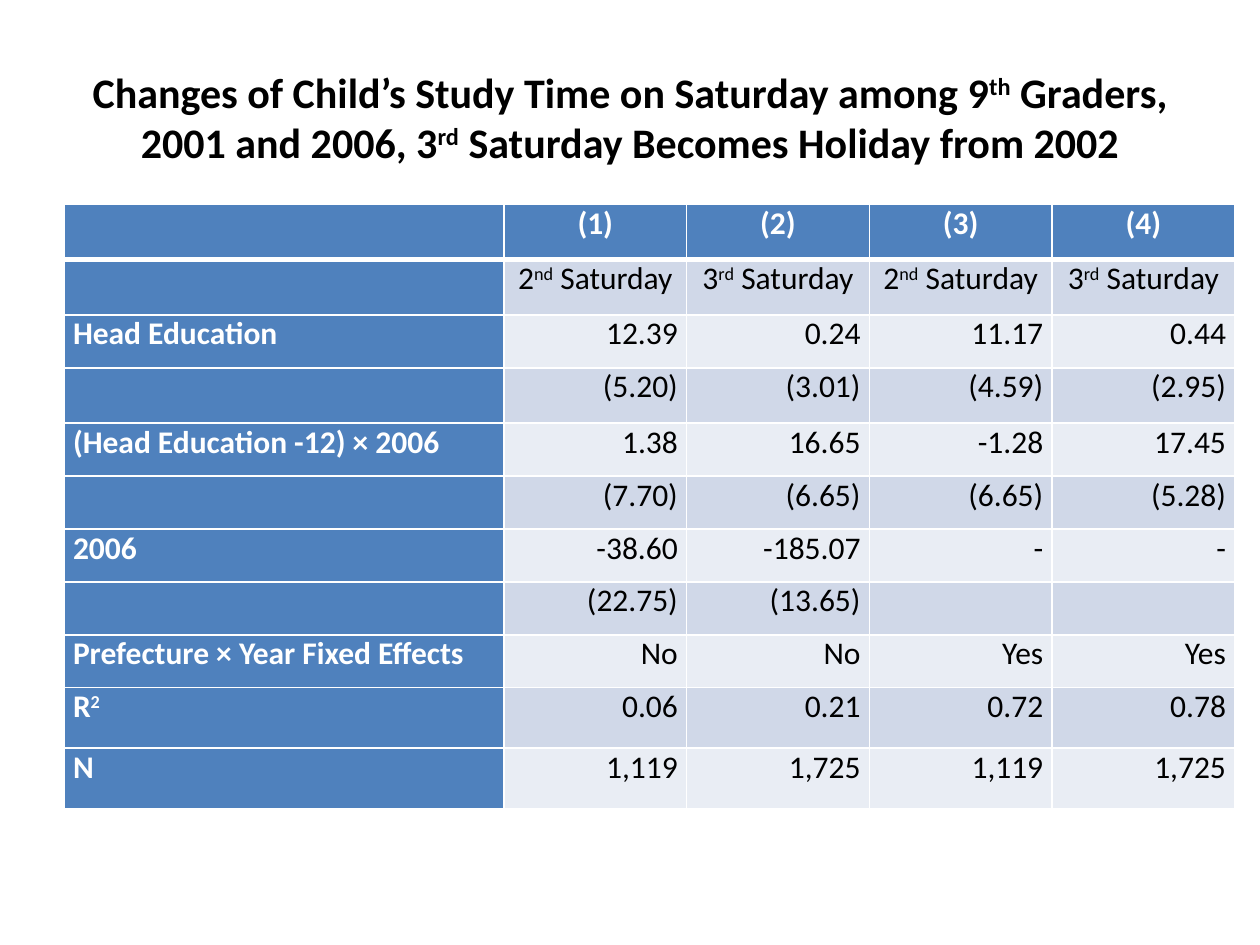
from pptx import Presentation
from pptx.dml.color import RGBColor as Rgb
from pptx.enum.text import MSO_ANCHOR as Anchor, PP_ALIGN as Align
from pptx.oxml import parse_xml
from pptx.oxml.ns import nsdecls
from pptx.util import Inches, Pt

# Content: text between carets is superscript
TITLE = ("Changes of Child’s Study Time on Saturday among 9^th^ Graders, "
         "2001 and 2006, 3^rd^ Saturday Becomes Holiday from 2002")
DAYS = ["2^nd^ Saturday", "3^rd^ Saturday"]
ROWS = [
    ["", "(1)", "(2)", "(3)", "(4)"],
    ["", *DAYS, *DAYS],
    ["Head Education", "12.39", "0.24", "11.17", "0.44"],
    ["", "(5.20)", "(3.01)", "(4.59)", "(2.95)"],
    ["(Head Education -12) × 2006", "1.38", "16.65", "-1.28", "17.45"],
    ["", "(7.70)", "(6.65)", "(6.65)", "(5.28)"],
    ["2006", "-38.60", "-185.07", "-", "-"],
    ["", "(22.75)", "(13.65)", "", ""],
    ["Prefecture × Year Fixed Effects", "No", "No", "Yes", "Yes"],
    ["R^2^", "0.06", "0.21", "0.72", "0.78"],
    ["N", "1,119", "1,725", "1,119", "1,725"],
]
WIDTHS = [3.49] + [1.45] * 4
HEIGHTS = [0.44, 0.44, 0.42, 0.44] + [0.42] * 5 + [0.48] * 2

THEME = {
    "font": "Calibri", "title": 24, "body": 18,
    "ink": "000000", "white": "FFFFFF", "head": "4F81BD",
    "bands": ["E9EDF4", "D0D8E8"],
}


def write(para, text, size, color, bold):
    """Add text run by run, raising the parts between carets."""
    for i, part in enumerate(text.split("^")):
        if not part:
            continue
        run = para.add_run()
        run.text = part
        font = run.font
        font.name, font.size, font.bold = THEME["font"], Pt(size), bold
        font.color.rgb = Rgb.from_string(color)
        if i % 2:
            run._r.get_or_add_rPr().set("baseline", "30000")


def edge(cell, side, width):
    """Draw one cell border; the sides must come before the fill."""
    cell._tc.get_or_add_tcPr().append(parse_xml(
        f'<a:{side} {nsdecls("a")} w="{Pt(width)}"><a:solidFill>'
        f'<a:srgbClr val="{THEME["white"]}"/></a:solidFill></a:{side}>'))


def style(cell, row, col):
    """Set the borders, fill, margins and text of one cell."""
    for side in ("lnL", "lnR", "lnT", "lnB"):
        heavy = (row, side) in ((0, "lnB"), (1, "lnT"))
        edge(cell, side, 3 if heavy else 1)
    head = row == 0 or col == 0
    cell.fill.solid()
    cell.fill.fore_color.rgb = Rgb.from_string(
        THEME["head"] if head else THEME["bands"][row % 2])
    cell.margin_left = cell.margin_right = Inches(0.07)
    cell.margin_top = cell.margin_bottom = 0

    para = cell.text_frame.paragraphs[0]
    if col == 0:
        para.alignment = Align.LEFT if row > 8 else Align.JUSTIFY
    else:
        para.alignment = Align.CENTER if row < 2 else Align.RIGHT
    write(para, ROWS[row][col], THEME["body"],
          THEME["white" if head else "ink"], head)


def main():
    deck = Presentation()
    deck.slide_width, deck.slide_height = Inches(10), Inches(7.5)
    slide = deck.slides.add_slide(deck.slide_layouts[5])

    # Title
    title = slide.shapes.title
    title.left, title.top = Inches(0.5), Inches(0.3)
    title.width, title.height = Inches(9), Inches(1.25)
    title.text_frame.vertical_anchor = Anchor.MIDDLE
    para = title.text_frame.paragraphs[0]
    para.alignment = Align.CENTER
    write(para, TITLE, THEME["title"], THEME["ink"], True)

    # Regression table
    table = slide.shapes.add_table(
        len(ROWS), len(WIDTHS), Inches(0.51), Inches(1.62),
        Inches(sum(WIDTHS)), Inches(sum(HEIGHTS))).table
    table.first_col = True
    for col, width in zip(table.columns, WIDTHS):
        col.width = Inches(width)
    for r, height in enumerate(HEIGHTS):
        table.rows[r].height = Inches(height)
        for c in range(len(WIDTHS)):
            style(table.cell(r, c), r, c)

    deck.save("out.pptx")


if __name__ == "__main__":
    main()
